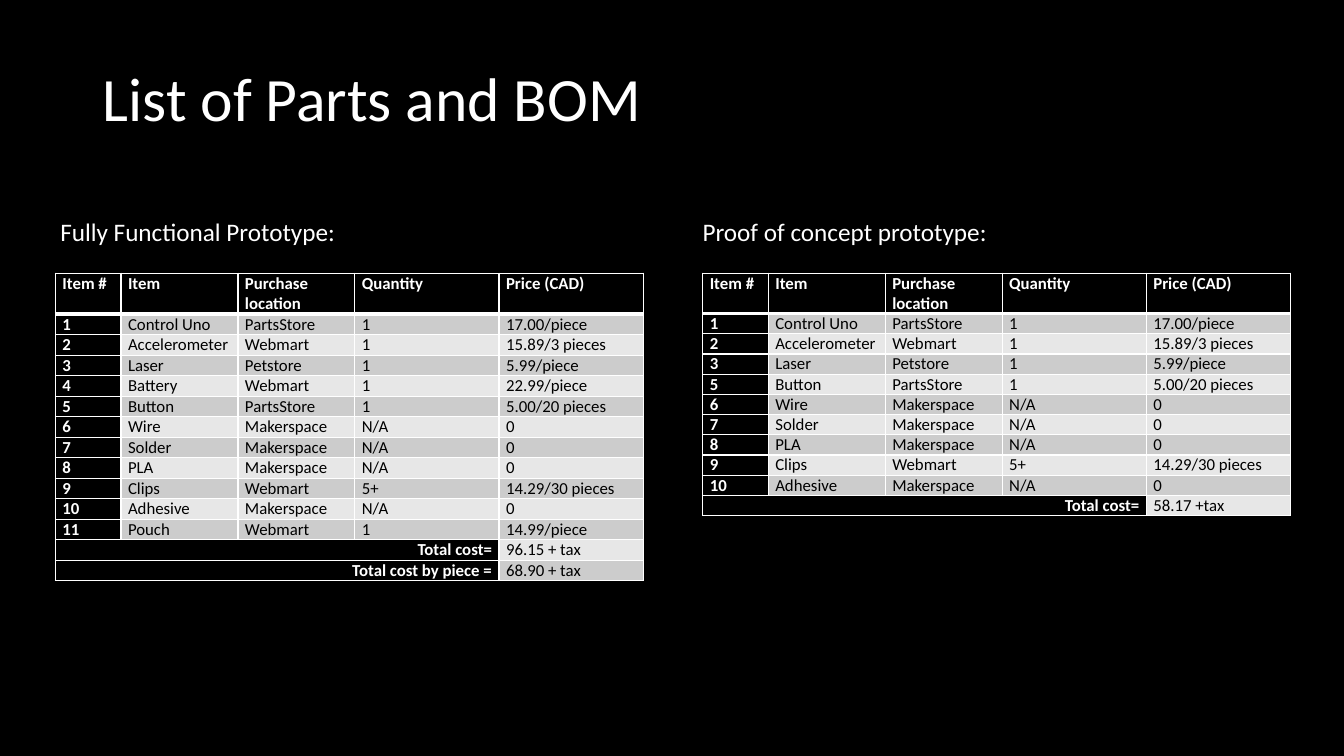
from lxml import etree
from pptx import Presentation
from pptx.dml.color import RGBColor
from pptx.enum.text import MSO_ANCHOR, PP_ALIGN
from pptx.oxml.ns import qn
from pptx.util import Inches, Pt

JUST, RIGHT = PP_ALIGN.JUSTIFY, PP_ALIGN.RIGHT
TOP, MID = MSO_ANCHOR.TOP, MSO_ANCHOR.MIDDLE
FONT = "Calibri"
HUES = {"black": "000000", "white": "FFFFFF", "dark": "CCCCCC", "light": "E7E7E7"}

TITLE = "List of Parts and BOM"
HEAD = ("Item #", "Item", "Purchase location", "Quantity", "Price (CAD)")
PARTS = [
    ("1", "Control Uno", "PartsStore", "1", "17.00/piece"),
    ("2", "Accelerometer", "Webmart", "1", "15.89/3 pieces"),
    ("3", "Laser", "Petstore", "1", "5.99/piece"),
    ("4", "Battery", "Webmart", "1", "22.99/piece"),
    ("5", "Button", "PartsStore", "1", "5.00/20 pieces"),
    ("6", "Wire", "Makerspace", "N/A", "0"),
    ("7", "Solder", "Makerspace", "N/A", "0"),
    ("8", "PLA", "Makerspace", "N/A", "0"),
    ("9", "Clips", "Webmart", "5+", "14.29/30 pieces"),
    ("10", "Adhesive", "Makerspace", "N/A", "0"),
    ("11", "Pouch", "Webmart", "1", "14.99/piece"),
]
PROOF = [part for part in PARTS if part[1] not in ("Battery", "Pouch")]
FULL_SUMS = [("Total cost=", "96.15 + tax"), ("Total cost by piece =", "68.90 + tax")]
PROOF_SUMS = [("Total cost=", "58.17 +tax")]

WIDE, HIGH = 13.33, 7.5
COLS = (0.65, 1.16, 1.16, 1.43, 1.43)
ROW = 0.2
GRID_TOP = 2.71
LABEL_TOP = 0.28 * HIGH
LISTS = [
    ("Fully Functional Prototype:", 0.5, 3, MID, 0.55, PARTS, FULL_SUMS),
    ("Proof of concept prototype:", 6.87, 6.4, TOP, 6.97, PROOF, PROOF_SUMS),
]


def hue(name):
    return RGBColor.from_string(HUES[name])


def style(para, size, color, bold=False):
    font = para.font
    font.name, font.size, font.bold = FONT, Pt(size), bold
    font.color.rgb = hue(color)


def label(slide, text, left, top, wide, high, size, anchor=TOP):
    box = slide.shapes.add_textbox(*map(Inches, (left, top, wide, high)))
    frame = box.text_frame
    frame.word_wrap, frame.vertical_anchor = True, anchor
    para = frame.paragraphs[0]
    para.text = text
    style(para, size, "white")
    return para


def edge(cell, row):
    props = cell._tc.get_or_add_tcPr()
    for side in "LRTB":
        thick = (row, side) in ((0, "B"), (1, "T"))
        line = etree.SubElement(props, qn(f"a:ln{side}"), w=str(Pt(3 if thick else 1)))
        fill = etree.SubElement(line, qn("a:solidFill"))
        etree.SubElement(fill, qn("a:srgbClr"), val=HUES["white"])


def paint(cell, text, row, dark, align):
    edge(cell, row)
    cell.margin_left = cell.margin_right = Inches(0.07)
    cell.margin_top = cell.margin_bottom = 0
    shade = "black" if dark else ("dark" if row % 2 else "light")
    cell.fill.solid()
    cell.fill.fore_color.rgb = hue(shade)
    para = cell.text_frame.paragraphs[0]
    para.text = text
    para.alignment, para.space_after = align, Pt(8)
    style(para, 12, "white" if dark else "black", dark)


def grid(slide, left, parts, sums):
    last = len(COLS) - 1
    rows = [HEAD, *parts] + [(name,) + ("",) * (last - 1) + (cost,) for name, cost in sums]
    spot = map(Inches, (left, GRID_TOP, sum(COLS), ROW * (len(rows) + 1)))
    table = slide.shapes.add_table(len(rows), len(COLS), *spot).table
    table.horz_banding = False
    for col, wide in zip(table.columns, COLS):
        col.width = Inches(wide)
    for r, texts in enumerate(rows):
        total = r > len(parts)
        table.rows[r].height = Inches(ROW if r else 2 * ROW)
        for c, text in enumerate(texts):
            dark = r == 0 or c == 0 or (total and c < last)
            paint(table.cell(r, c), text, r, dark, RIGHT if total and c < last else JUST)
        if total:
            table.cell(r, 0).merge(table.cell(r, last - 1))


def main():
    deck = Presentation()
    deck.slide_width, deck.slide_height = Inches(WIDE), Inches(HIGH)
    slide = deck.slides.add_slide(deck.slide_layouts[6])
    back = slide.background.fill
    back.solid()
    back.fore_color.rgb = hue("black")
    for text, left, wide, anchor, start, parts, sums in LISTS:
        grid(slide, start, parts, sums)
        label(slide, text, left, LABEL_TOP, wide, 2 * ROW, 18, anchor)
    title = label(slide, TITLE, 0.92, 0.63, 11.5, 1.45, 44)
    title.line_spacing = 0.9
    deck.save("out.pptx")


if __name__ == "__main__":
    main()
